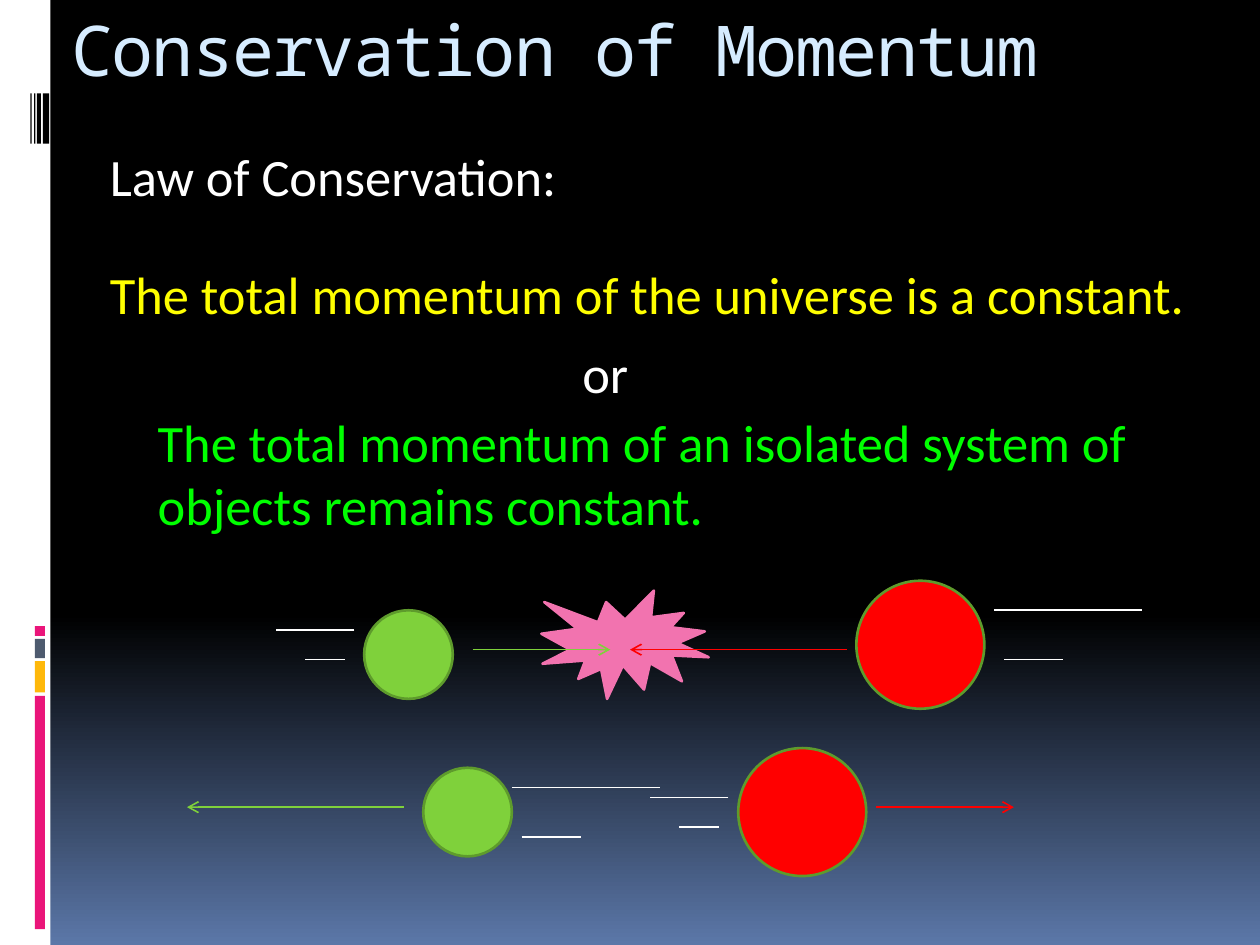
import copy

import pptx
import pptx.dml.color
import pptx.enum.shapes
import pptx.enum.text
import pptx.oxml.ns
import pptx.util
from lxml import etree

COLORS = {
    "black": "000000", "blue": "5B77A8", "white": "FFFFFF",
    "magenta": "EA157A", "amber": "FEB80A", "slate": "4E5B6F",
    "pink": "F273AF", "sky": "D6ECFF", "yellow": "FFFF00",
    "lime": "00FF00", "green": "7FD13B", "red": "FF0000",
    "outline": "5E9B2C",
}
COLUMNS, ROWS = 128, 96
TITLE = ("Conservation of Momentum", (6, 0, 109, 12.8))
STATEMENTS = [
    ("Law of Conservation:", (9, 14, 57, 14), "white", -0.38),
    ("The total momentum of the universe is a constant.", (9, 26, 115, 14), "yellow", -0.38),
    ("or", (57, 34, 10, 10), "white", -0.38),
    ("The total momentum of an isolated system of objects remains constant.",
     (9, 41, 119, 20), "lime", 0),
]
SIDEBAR = (0, 0, 5.12, 96)
SIDEBAR_BLOCKS = [
    (70.7, 23.7, "magenta"), (67.15, 3.2, "amber"),
    (64.9, 1.95, "slate"), (63.6, 1, "magenta"),
]
BARCODE = [(4.35, 0.64), (3.75, 0.4), (3.46, 0.13), (3.1, 0.13)]
COLLISION = (55, 60, 17, 11)
BALLS = [
    {"color": "red", "box": (75, 76, 13, 13), "arrow": (89, 82, 103),
     "speed": [(74, 81, 66), (73, 84, 69)]},
    {"color": "green", "box": (43, 78, 9, 9), "arrow": (41, 82, 19),
     "speed": [(52, 80, 67), (53, 85, 59)]},
    {"color": "green", "box": (37, 62, 9, 9), "arrow": (48, 66, 62),
     "speed": [(36, 64, 28), (35, 67, 31)]},
    {"color": "red", "box": (87, 59, 13, 13), "arrow": (86, 66, 64),
     "speed": [(101, 62, 116), (102, 67, 108)]},
]

SHAPES = pptx.enum.shapes.MSO_SHAPE
presentation = pptx.Presentation()
presentation.slide_width = pptx.util.Inches(10)
presentation.slide_height = pptx.util.Inches(7.5)
slide = presentation.slides.add_slide(presentation.slide_layouts[6])


def place(*lengths):
    units = (presentation.slide_width / COLUMNS, presentation.slide_height / ROWS)
    return [round(length * units[i % 2]) for i, length in enumerate(lengths)]


def rgb(name):
    return pptx.dml.color.RGBColor.from_string(COLORS[name])


def paint_background():
    fill = slide.background.fill
    fill.gradient()
    fill.gradient_angle = 270
    first, last = fill.gradient_stops
    first.color.rgb, first.position = rgb("black"), 0
    last.color.rgb, last.position = rgb("blue"), 1
    stops = slide.background._cSld.find(".//" + pptx.oxml.ns.qn("a:gsLst"))
    middle = copy.deepcopy(stops[0])
    middle.set("pos", "65000")
    stops.insert(1, middle)


def add_figure(kind, box, color, outline=None):
    shape = slide.shapes.add_shape(kind, *place(*box))
    shape.shadow.inherit = False
    shape.fill.solid()
    shape.fill.fore_color.rgb = rgb(color)
    if outline:
        shape.line.color.rgb = rgb(outline)
        shape.line.width = pptx.util.Pt(1.5)
    else:
        shape.line.fill.background()


def add_line(start, row, end, color, arrow=False):
    connector = slide.shapes.add_connector(
        pptx.enum.shapes.MSO_CONNECTOR.STRAIGHT, *place(start, row, end, row))
    connector.line.color.rgb = rgb(color)
    connector.line.width = pptx.util.Pt(0.94)
    if arrow:
        etree.SubElement(connector.line._get_or_add_ln(),
                         pptx.oxml.ns.qn("a:tailEnd"), type="arrow")
    etree.SubElement(connector._element.spPr, pptx.oxml.ns.qn("a:effectLst"))


def add_text(text, box, color, font_name, size):
    frame = slide.shapes.add_textbox(*place(*box)).text_frame
    frame.word_wrap = True
    frame.vertical_anchor = pptx.enum.text.MSO_ANCHOR.TOP
    paragraph = frame.paragraphs[0]
    paragraph.text = text
    paragraph.font.name = font_name
    paragraph.font.size = pptx.util.Pt(size)
    paragraph.font.color.rgb = rgb(color)
    return paragraph


paint_background()
add_figure(SHAPES.RECTANGLE, SIDEBAR, "white")
for top, height, color in SIDEBAR_BLOCKS:
    add_figure(SHAPES.RECTANGLE, (3.55, top, 1.02, height), color)
for left, width in BARCODE:
    add_figure(SHAPES.RECTANGLE, (left, 9.5, width, 5.1), "black")
add_figure(SHAPES.EXPLOSION1, COLLISION, "pink", "pink")

title = add_text(*TITLE, "sky", "Noto Sans Mono", 40)
title.runs[0]._r.get_or_add_rPr().set("spc", "-100")
for text, box, color, indent in STATEMENTS:
    paragraph = add_text(text, box, color, "Calibri", 30)
    paragraph.space_before = pptx.util.Pt(7)
    properties = paragraph._p.get_or_add_pPr()
    properties.set("marL", str(pptx.util.Inches(0.45)))
    properties.set("indent", str(pptx.util.Inches(indent)))

for ball in BALLS:
    add_figure(SHAPES.OVAL, ball["box"], ball["color"], "outline")
    add_line(*ball["arrow"], ball["color"], arrow=True)
    for streak in ball["speed"]:
        add_line(*streak, "white")

presentation.save("out.pptx")
